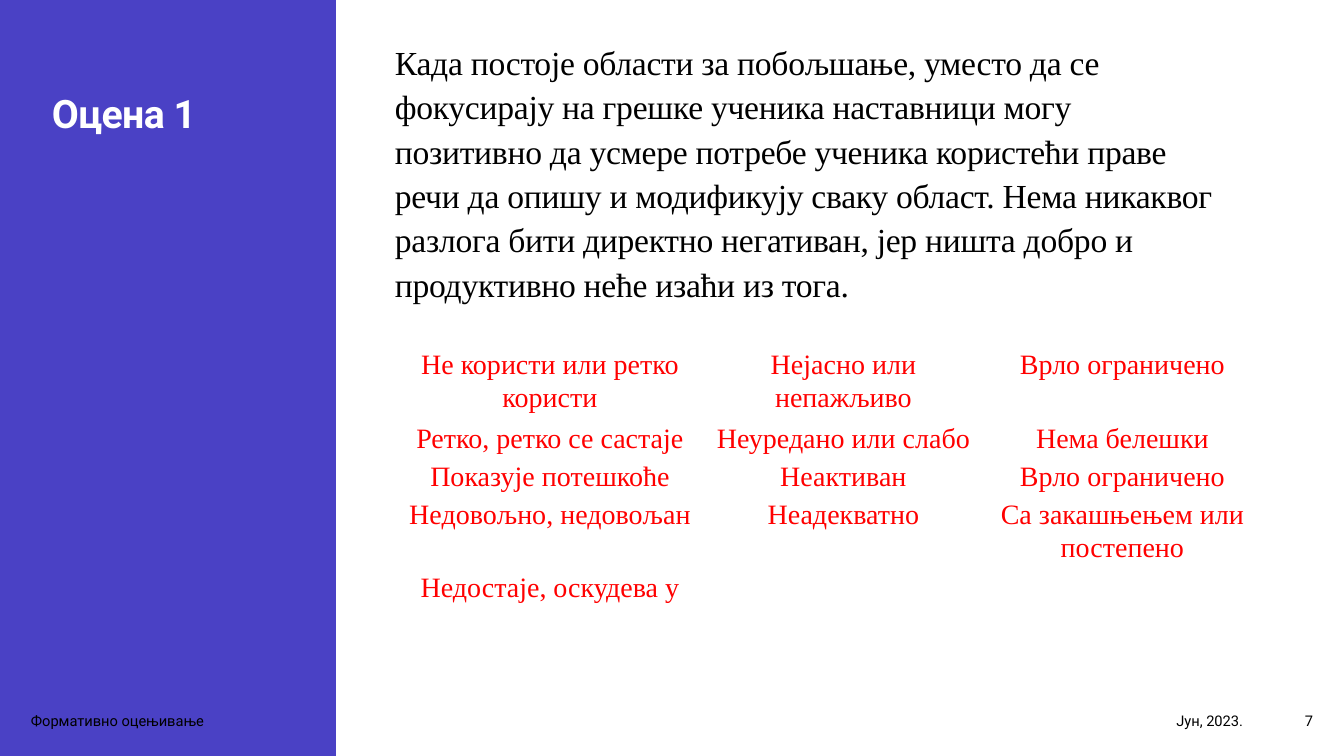
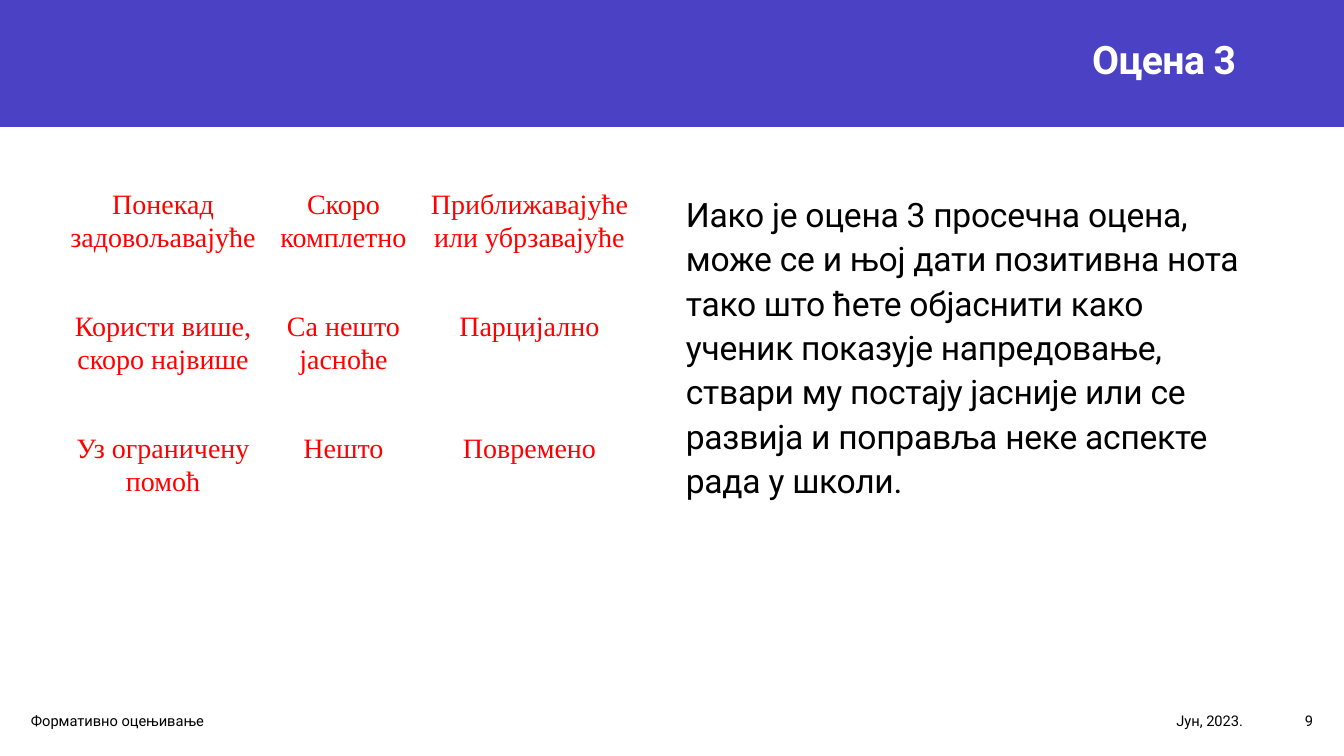
import dataclasses

import pptx
import pptx.dml.color
import pptx.enum.shapes
import pptx.enum.text
import pptx.util

ALIGN = pptx.enum.text.PP_ALIGN
ANCHOR = pptx.enum.text.MSO_ANCHOR
PX = 914400 / 100.8


@dataclasses.dataclass(frozen=True)
class Theme:
    band: str = "4A41C5"
    white: str = "FFFFFF"
    black: str = "000000"
    red: str = "FF0000"
    sans: str = "Roboto"
    serif: str = "Times New Roman"
    title: float = 28
    body: float = 24
    table: float = 20
    footer: float = 10.5


theme = Theme()


def px(n):
    return pptx.util.Emu(round(n * PX))


def put_text(tf, text, *, size, font=theme.sans, color=theme.black, bold=False,
             align=ALIGN.LEFT, anchor=ANCHOR.TOP, line=1.0, before=0, after=0,
             tracking=0):
    tf.word_wrap = True
    tf.vertical_anchor = anchor
    p = tf.paragraphs[0]
    p.alignment = align
    p.line_spacing = line
    p.space_before = pptx.util.Pt(before)
    p.space_after = pptx.util.Pt(after)
    r = p.add_run()
    r.text = text
    r.font.name = font
    r.font.size = pptx.util.Pt(size)
    r.font.bold = bold
    r.font.color.rgb = pptx.dml.color.RGBColor.from_string(color)
    if tracking:
        r._r.get_or_add_rPr().set("spc", str(tracking))


# Shared styles
title_style = dict(size=theme.title, color=theme.white, bold=True, line=0.9, tracking=-40)
body_style = dict(size=theme.body, line=1.1, tracking=-20)
cell_style = dict(size=theme.table, font=theme.serif, color=theme.red,
                  align=ALIGN.CENTER, line=1.07, after=8)
footer_style = dict(size=theme.footer, anchor=ANCHOR.MIDDLE)

# Slide content; boxes are left, top, width, height
slides = [
    dict(
        number="7",
        band=(0, 0, 336, 756),
        title="Оцена 1",
        title_box=(42, 90, 248, 410),
        title_format={},
        body="Када постоје области за побољшање, уместо да се фокусирају на грешке "
             "ученика наставници могу позитивно да усмере потребе ученика користећи "
             "праве речи да опишу и модификују сваку област. Нема никаквог разлога "
             "бити директно негативан, јер ништа добро и продуктивно неће изаћи из тога.",
        body_box=(385, 33, 839, 708),
        body_format=dict(font=theme.serif, after=6),
        table_at=(399, 345),
        cols=[302, 285, 273],
        rows=[65, 33, 33, 65, 49],
        cells=[
            ["Не користи или ретко користи", "Нејасно или непажљиво", "Врло ограничено"],
            ["Ретко, ретко се састаје", "Неуредано или слабо", "Нема белешки"],
            ["Показује потешкоће", "Неактиван", "Врло ограничено"],
            ["Недовољно, недовољан", "Неадекватно", "Са закашњењем или постепено"],
            ["Недостаје, оскудева у", "", ""],
        ],
    ),
    dict(
        number="9",
        band=(0, 0, 1344, 127),
        title="Оцена 3",
        title_box=(109, 27, 1137, 69),
        title_format=dict(align=ALIGN.RIGHT, anchor=ANCHOR.MIDDLE),
        body="Иако је оцена 3 просечна оцена, може се и њој дати позитивна нота тако "
             "што ћете објаснити како ученик показује напредовање, ствари му постају "
             "јасније или се развија и поправља неке аспекте  рада у школи.",
        body_box=(676, 185, 582, 496),
        body_format=dict(before=10, after=8),
        table_at=(58, 185),
        cols=[210, 151, 221],
        rows=[122, 122, 122],
        cells=[
            ["Понекад задовољавајуће", "Скоро комплетно", "Приближавајуће или убрзавајуће"],
            ["Користи више, скоро највише", "Са нешто јасноће", "Парцијално"],
            ["Уз ограничену помоћ", "Нешто", "Повремено"],
        ],
    ),
]

prs = pptx.Presentation()
prs.slide_width = px(1344)
prs.slide_height = px(756)

for content in slides:
    s = prs.slides.add_slide(prs.slide_layouts[6])

    # Colour band
    sp = s.shapes.add_shape(pptx.enum.shapes.MSO_SHAPE.RECTANGLE, *map(px, content["band"]))
    sp.shadow.inherit = False
    sp.fill.solid()
    sp.fill.fore_color.rgb = pptx.dml.color.RGBColor.from_string(theme.band)
    sp.line.fill.background()

    # Title, body and footer
    texts = [
        (content["title"], content["title_box"], title_style | content["title_format"]),
        (content["body"], content["body_box"], body_style | content["body_format"]),
        ("Формативно оцењивање", (21, 701, 533, 40), footer_style),
        ("Јун, 2023.", (773, 701, 480, 40), footer_style | dict(align=ALIGN.RIGHT)),
        (content["number"], (1253, 701, 70, 40),
         footer_style | dict(align=ALIGN.RIGHT, after=6)),
    ]
    for text, box, style in texts:
        put_text(s.shapes.add_textbox(*map(px, box)).text_frame, text, **style)

    # Table of phrases
    cols, rows = content["cols"], content["rows"]
    table = s.shapes.add_table(len(rows), len(cols), *map(px, content["table_at"]),
                               px(sum(cols)), px(sum(rows))).table
    table.first_row = False
    table.horz_banding = False
    for col, width in zip(table.columns, cols):
        col.width = px(width)
    for row, height, phrases in zip(table.rows, rows, content["cells"]):
        row.height = px(height)
        for cell, phrase in zip(row.cells, phrases):
            cell.fill.background()
            cell.margin_left = cell.margin_right = cell.margin_top = px(2)
            cell.margin_bottom = 0
            if phrase:
                put_text(cell.text_frame, phrase, **cell_style)

prs.save("out.pptx")
